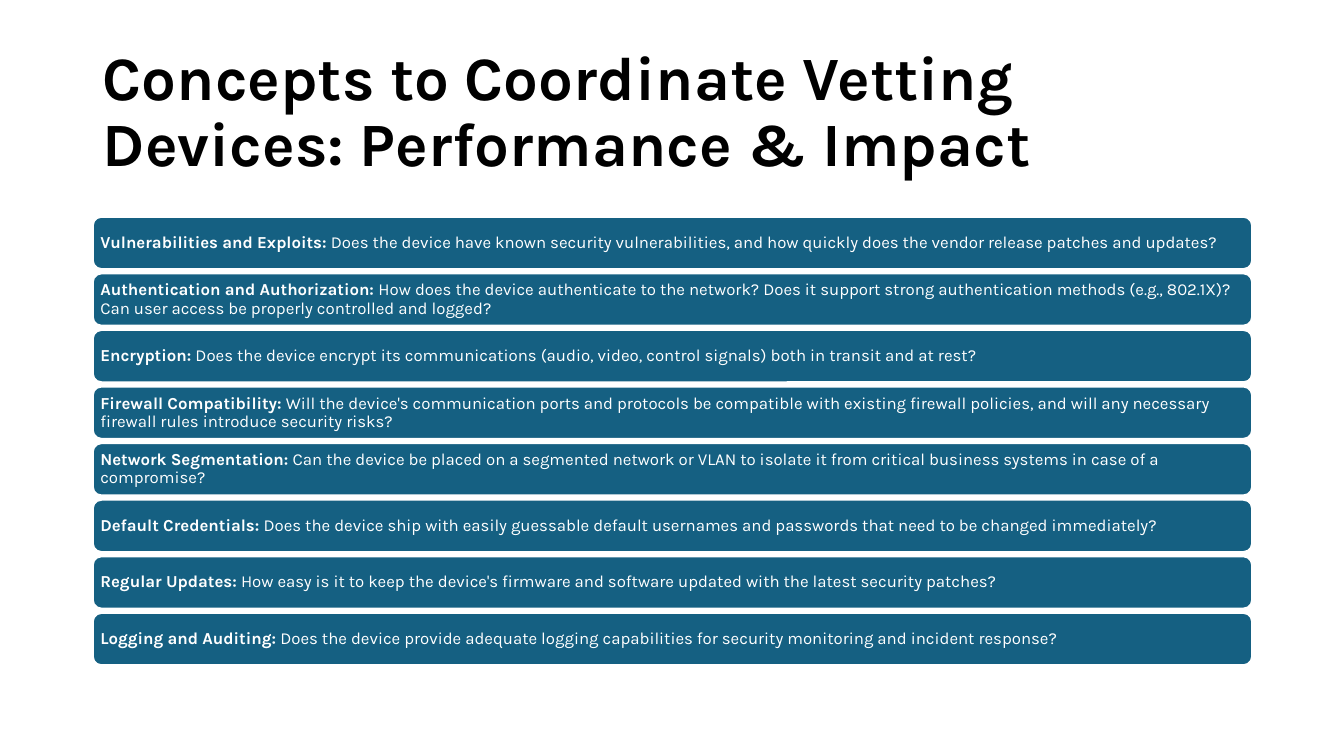
from pptx import Presentation
from pptx.dml.color import RGBColor
from pptx.enum.shapes import MSO_SHAPE
from pptx.enum.text import MSO_ANCHOR, MSO_AUTO_SIZE, PP_ALIGN
from pptx.util import Inches, Pt

COLORS = {"title": "000000", "bar": "156082", "bar_text": "FFFFFF", "outline": "FFFFFF"}
FONT = "Karla"
SLIDE_WIDTH, SLIDE_HEIGHT = 13.33, 7.5
LEFT, CONTENT_WIDTH = 0.92, 11.5
TITLE_TOP, TITLE_HEIGHT = 0.4, 1.45
LIST_TOP, LIST_HEIGHT, BAR_HEIGHT = 2.15, 4.45, 0.52

TITLE = "Concepts to Coordinate Vetting Devices: Performance & Impact"
CONCEPTS = [
    ("Vulnerabilities and Exploits:",
     "Does the device have known security vulnerabilities, and how quickly does "
     "the vendor release patches and updates?"),
    ("Authentication and Authorization:",
     "How does the device authenticate to the network? Does it support strong "
     "authentication methods (e.g., 802.1X)? Can user access be properly "
     "controlled and logged?"),
    ("Encryption:",
     "Does the device encrypt its communications (audio, video, control signals) "
     "both in transit and at rest?"),
    ("Firewall Compatibility:",
     "Will the device's communication ports and protocols be compatible with "
     "existing firewall policies, and will any necessary firewall rules "
     "introduce security risks?"),
    ("Network Segmentation:",
     "Can the device be placed on a segmented network or VLAN to isolate it from "
     "critical business systems in case of a compromise?"),
    ("Default Credentials:",
     "Does the device ship with easily guessable default usernames and passwords "
     "that need to be changed immediately?"),
    ("Regular Updates:",
     "How easy is it to keep the device's firmware and software updated with the "
     "latest security patches?"),
    ("Logging and Auditing:",
     "Does the device provide adequate logging capabilities for security "
     "monitoring and incident response?"),
]


def rgb(role):
    return RGBColor.from_string(COLORS[role])


def add_text(paragraph, text, *, size, color, bold=False):
    run = paragraph.add_run()
    run.text = text
    run.font.name = FONT
    run.font.size = Pt(size)
    run.font.bold = bold
    run.font.color.rgb = rgb(color)


def prepare_frame(frame, inset_x, inset_y):
    frame.word_wrap = True
    frame.auto_size = MSO_AUTO_SIZE.NONE
    frame.vertical_anchor = MSO_ANCHOR.MIDDLE
    frame.margin_left = frame.margin_right = Inches(inset_x)
    frame.margin_top = frame.margin_bottom = Inches(inset_y)
    paragraph = frame.paragraphs[0]
    paragraph.alignment = PP_ALIGN.LEFT
    paragraph.line_spacing = 0.9
    paragraph.space_before = Pt(0)
    return paragraph


def add_title(slide):
    heading = slide.shapes.title
    heading.left, heading.top = Inches(LEFT), Inches(TITLE_TOP)
    heading.width, heading.height = Inches(CONTENT_WIDTH), Inches(TITLE_HEIGHT)
    paragraph = prepare_frame(heading.text_frame, 0.1, 0.05)
    add_text(paragraph, TITLE, size=44, color="title", bold=True)


def add_concept(slide, top, topic, question):
    bar = slide.shapes.add_shape(
        MSO_SHAPE.ROUNDED_RECTANGLE,
        Inches(LEFT), Inches(top), Inches(CONTENT_WIDTH), Inches(BAR_HEIGHT))
    bar.shadow.inherit = False
    bar.fill.solid()
    bar.fill.fore_color.rgb = rgb("bar")
    bar.line.color.rgb = rgb("outline")
    bar.line.width = Pt(1.5)
    paragraph = prepare_frame(bar.text_frame, 0.05, 0.05)
    add_text(paragraph, topic, size=12, color="bar_text", bold=True)
    add_text(paragraph, f" {question}", size=12, color="bar_text")


def main():
    deck = Presentation()
    deck.slide_width, deck.slide_height = Inches(SLIDE_WIDTH), Inches(SLIDE_HEIGHT)
    slide = deck.slides.add_slide(deck.slide_layouts.get_by_name("Title Only"))
    add_title(slide)
    pitch = (LIST_HEIGHT - BAR_HEIGHT) / (len(CONCEPTS) - 1)
    for row, (topic, question) in enumerate(CONCEPTS):
        add_concept(slide, LIST_TOP + row * pitch, topic, question)
    deck.save("out.pptx")


if __name__ == "__main__":
    main()
